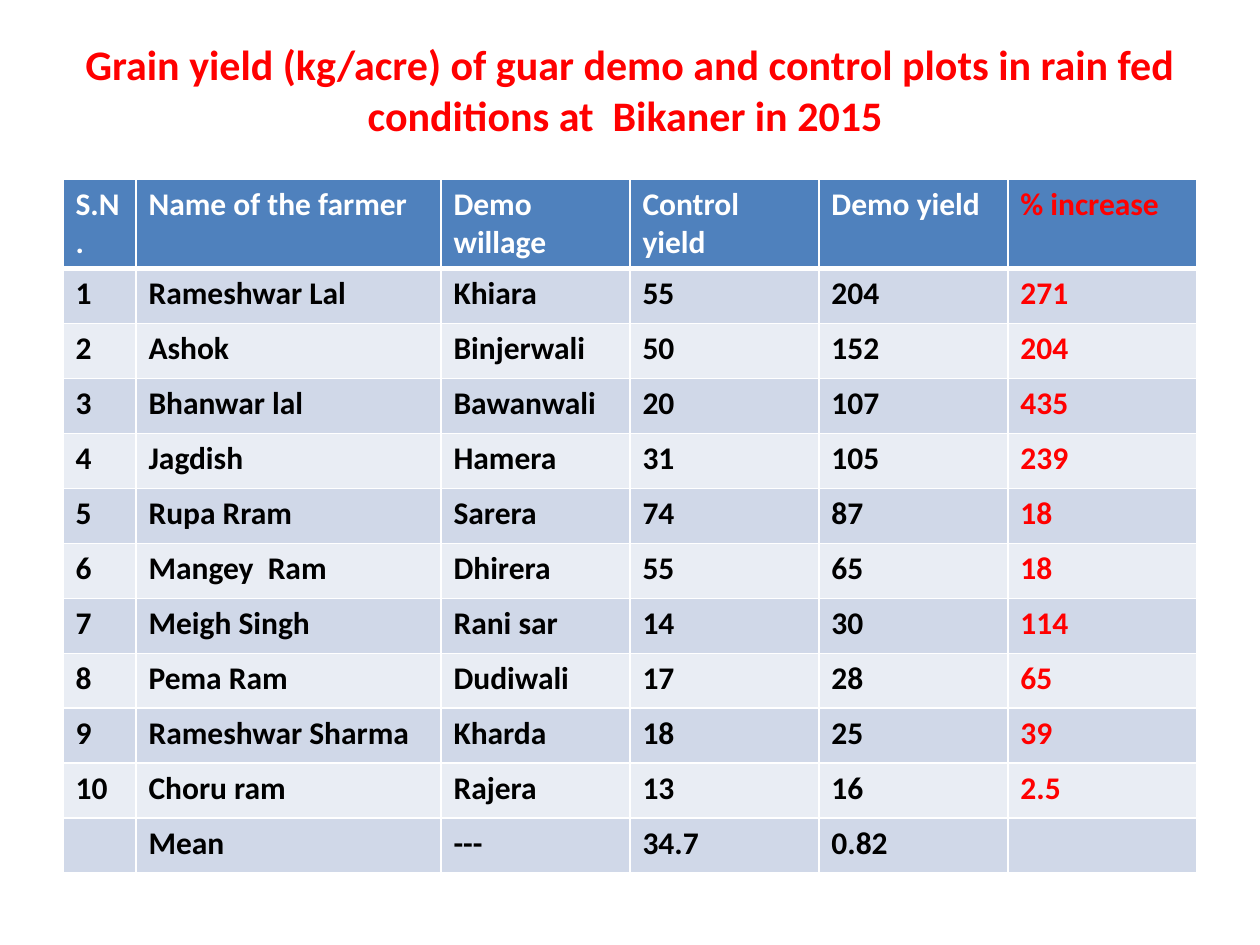
import pptx
import pptx.dml.color
import pptx.enum.text
import pptx.oxml
import pptx.oxml.ns
import pptx.util

SCALE = 914400 // 126
SLIDE_SIZE = (1260, 945)
TITLE = "Grain yield (kg/acre) of guar demo and control plots in rain fed conditions at  Bikaner in 2015 "
TITLE_BOX = (63, 21, 1134, 136)
TABLE_ORIGIN = (63, 179)
COLUMN_WIDTHS = [73, 305, 189, 189, 189, 189]
ROW_HEIGHT = 55

HEADER = ("S.N.", "Name of the farmer", "Demo willage", "Control yield", "Demo yield", "% increase")
FARMERS = [
    ("Rameshwar Lal", "Khiara", "55", "204", "271"),
    ("Ashok", "Binjerwali", "50", "152", "204"),
    ("Bhanwar lal", "Bawanwali", "20", "107", "435"),
    ("Jagdish", "Hamera", "31", "105", "239"),
    ("Rupa Rram", "Sarera", "74", "87", "18"),
    ("Mangey  Ram", "Dhirera", "55", "65", "18"),
    ("Meigh Singh", "Rani sar", "14", "30", "114"),
    ("Pema Ram", "Dudiwali", "17", "28", "65"),
    ("Rameshwar Sharma", "Kharda", "18", "25", "39"),
    ("Choru ram", "Rajera", "13", "16", "2.5"),
]
MEAN = ("", "Mean", "---", "34.7", "0.82", "")

RED, WHITE, BLACK = "FF0000", "FFFFFF", "000000"
HEADER_FILL = "4F81BD"
BAND_FILLS = ("E9EDF4", "D0D8E8")
TITLE_FONT = {"name": "Calibri", "size": pptx.util.Pt(24), "bold": True}
CELL_FONT = {"name": "Calibri", "size": pptx.util.Pt(18), "bold": True}


def px(length):
    return pptx.util.Emu(length * SCALE)


def color(text):
    return pptx.dml.color.RGBColor.from_string(text)


def write(frame, text, font, text_color):
    span = frame.paragraphs[0].add_run()
    span.text = text
    for name, value in font.items():
        setattr(span.font, name, value)
    span.font.color.rgb = color(text_color)


def add_borders(cell, widths):
    properties = cell._tc.get_or_add_tcPr()
    for side, width in widths.items():
        properties.append(pptx.oxml.parse_xml(
            f'<a:{side} {pptx.oxml.ns.nsdecls("a")} w="{pptx.util.Pt(width)}">'
            f'<a:solidFill><a:srgbClr val="{WHITE}"/></a:solidFill></a:{side}>'))


def add_title(page):
    title = page.shapes.title
    for name, value in zip(("left", "top", "width", "height"), TITLE_BOX):
        setattr(title, name, px(value))
    frame = title.text_frame
    frame.word_wrap = True
    frame.auto_size = pptx.enum.text.MSO_AUTO_SIZE.NONE
    frame.vertical_anchor = pptx.enum.text.MSO_ANCHOR.MIDDLE
    frame.paragraphs[0].alignment = pptx.enum.text.PP_ALIGN.CENTER
    write(frame, TITLE, TITLE_FONT, RED)


def add_yield_table(page):
    numbered = [(str(number), *farmer) for number, farmer in enumerate(FARMERS, 1)]
    rows = [HEADER, *numbered, MEAN]
    size = (sum(COLUMN_WIDTHS), ROW_HEIGHT * len(rows))
    table = page.shapes.add_table(len(rows), len(HEADER), *map(px, TABLE_ORIGIN + size)).table
    for column, width in zip(table.columns, COLUMN_WIDTHS):
        column.width = px(width)
    for r, values in enumerate(rows):
        table.rows[r].height = px(ROW_HEIGHT)
        borders = {"lnL": 1, "lnR": 1, "lnT": 3 if r == 1 else 1, "lnB": 3 if r == 0 else 1}
        for c, text in enumerate(values):
            cell = table.cell(r, c)
            add_borders(cell, borders)
            cell.fill.solid()
            cell.fill.fore_color.rgb = color(BAND_FILLS[r % 2] if r else HEADER_FILL)
            if text:
                text_color = RED if c == len(HEADER) - 1 else BLACK if r else WHITE
                write(cell.text_frame, text, CELL_FONT, text_color)


def main():
    deck = pptx.Presentation()
    deck.slide_width, deck.slide_height = map(px, SLIDE_SIZE)
    page = deck.slides.add_slide(deck.slide_layouts.get_by_name("Title Only"))
    add_title(page)
    add_yield_table(page)
    deck.save("out.pptx")


if __name__ == "__main__":
    main()
